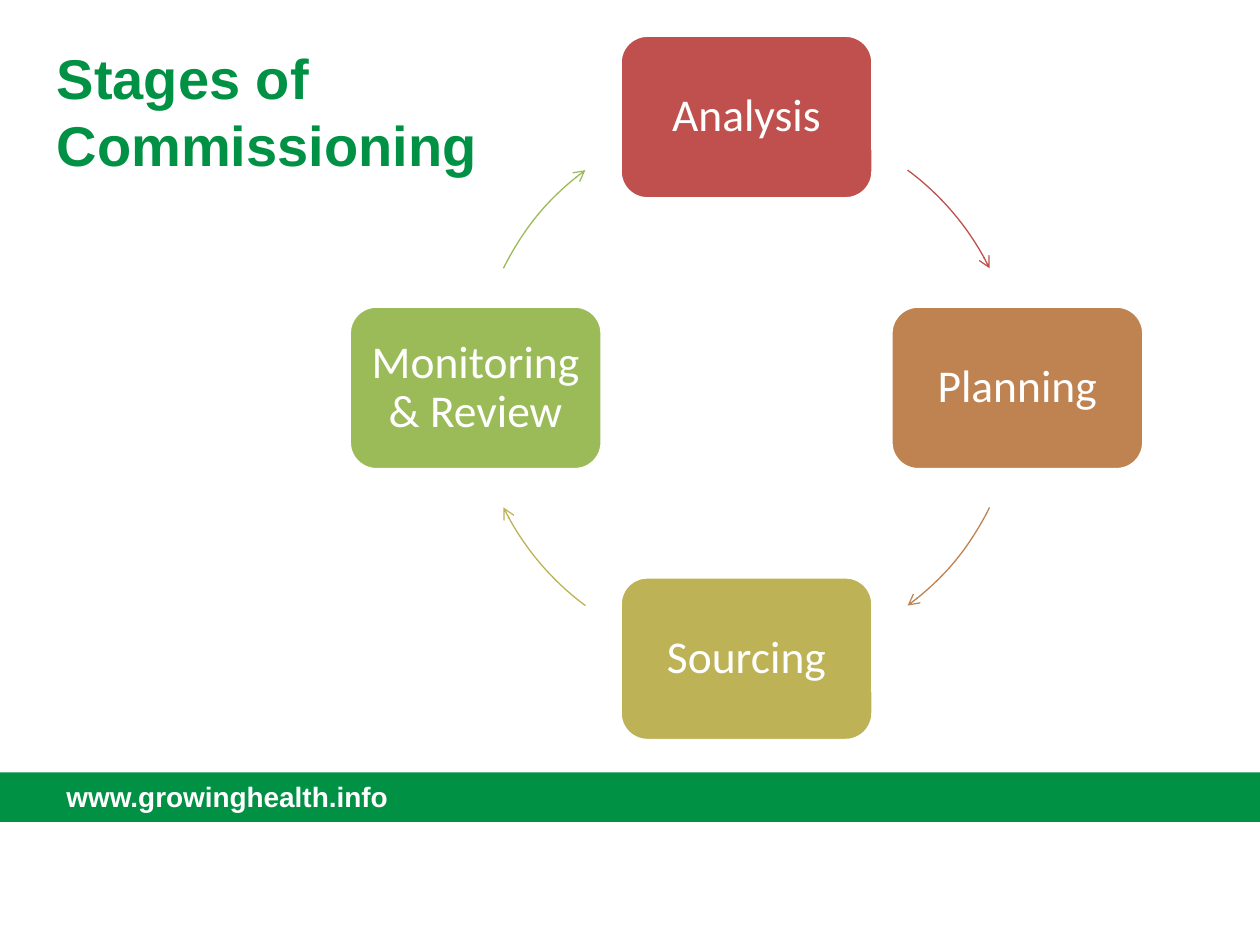
from math import cos, sin, radians

from lxml.etree import SubElement
from pptx import Presentation
from pptx.dml.color import RGBColor
from pptx.enum.shapes import MSO_SHAPE
from pptx.enum.text import MSO_ANCHOR, MSO_AUTO_SIZE, PP_ALIGN
from pptx.oxml.ns import qn
from pptx.util import Cm, Pt

COLORS = {
    "green": "009145",
    "white": "FFFFFF",
    "red": "C0504D",
    "brown": "BE8351",
    "olive": "BDB255",
    "lime": "9BBB59",
}
MID_X, MID_Y, RADIUS = 15.05, 7.82, 5.46
BOX_W, BOX_H = 5.1, 3.3
SWEEP = 27.3

# label, colour, angle of the box, start angle of the arrow after it
STAGES = [
    ("Analysis", "red", 270, 306.5),
    ("Planning", "brown", 0, 26.2),
    ("Sourcing", "olive", 90, 126.5),
    ("Monitoring & Review", "lime", 180, 206.2),
]


class Deck:
    """Holds the style and the current slide."""

    def __init__(self):
        self.prs = Presentation()
        self.prs.slide_width, self.prs.slide_height = Cm(25.4), Cm(19.05)
        self.slide = self.prs.slides.add_slide(self.prs.slide_layouts[5])

    def tint(self, name):
        return RGBColor.from_string(COLORS[name])

    def style(self, frame, text, size, font, color, bold=False):
        """Set the text of a frame and format its runs."""
        frame.word_wrap = True
        frame.auto_size = MSO_AUTO_SIZE.NONE
        frame.text = text
        for run in frame.paragraphs[0].runs:
            run.font.size = Pt(size)
            run.font.name = font
            run.font.bold = bold
            run.font.color.rgb = self.tint(color)

    def title(self, text, x, y, w, h):
        shape = self.slide.shapes.title
        shape.left, shape.top, shape.width, shape.height = map(Cm, (x, y, w, h))
        frame = shape.text_frame
        self.style(frame, text, 32, "Arial", "green", True)
        frame.vertical_anchor = MSO_ANCHOR.TOP
        frame.paragraphs[0].alignment = PP_ALIGN.LEFT

    def label(self, text, x, y, w, h):
        box = self.slide.shapes.add_textbox(*map(Cm, (x, y, w, h)))
        self.style(box.text_frame, text, 16, "Arial", "white", True)
        box.text_frame.vertical_anchor = MSO_ANCHOR.MIDDLE

    def shape(self, kind, x, y, w, h):
        shape = self.slide.shapes.add_shape(kind, *map(Cm, (x, y, w, h)))
        shape.shadow.inherit = False
        return shape

    def band(self, x, y, w, h):
        band = self.shape(MSO_SHAPE.RECTANGLE, x, y, w, h)
        band.fill.solid()
        band.fill.fore_color.rgb = self.tint("green")
        band.line.fill.background()

    def stage(self, text, color, angle):
        turn = radians(angle)
        x = MID_X + RADIUS * cos(turn) - BOX_W / 2
        y = MID_Y + RADIUS * sin(turn) - BOX_H / 2
        box = self.shape(MSO_SHAPE.ROUNDED_RECTANGLE, x, y, BOX_W, BOX_H)
        box.fill.solid()
        box.fill.fore_color.rgb = self.tint(color)
        box.line.color.rgb = self.tint("white")
        box.line.width = Pt(2)
        frame = box.text_frame
        frame.margin_left = frame.margin_right = Cm(0.27)
        self.style(frame, text, 26, "Calibri", "white")
        frame.vertical_anchor = MSO_ANCHOR.MIDDLE
        frame.paragraphs[0].alignment = PP_ALIGN.CENTER
        frame.paragraphs[0].line_spacing = 0.9

    def arrow(self, color, start):
        """Draw an arrow along the ring, clockwise from the start angle."""
        arc = self.shape(MSO_SHAPE.ARC, MID_X - RADIUS, MID_Y - RADIUS,
                         2 * RADIUS, 2 * RADIUS)
        # Arc angles count 60000 to a degree, adjustments 100000 to one
        arc.adjustments[0] = start * 0.6
        arc.adjustments[1] = (start + SWEEP) * 0.6
        arc.fill.background()
        arc.line.color.rgb = self.tint(color)
        arc.line.width = Pt(0.75)
        line = arc.element.spPr.find(qn("a:ln"))
        SubElement(line, qn("a:tailEnd"), type="arrow")


def main():
    deck = Deck()
    deck.band(-0.05, 15.57, 25.5, 1)
    deck.label("www.growinghealth.info", 1.09, 15.56, 9.6, 1)
    for text, color, angle, start in STAGES:
        deck.stage(text, color, angle)
        deck.arrow(color, start)
    deck.title("Stages of Commissioning", 0.89, 0.74, 9, 3)
    deck.prs.save("out.pptx")


if __name__ == "__main__":
    main()
